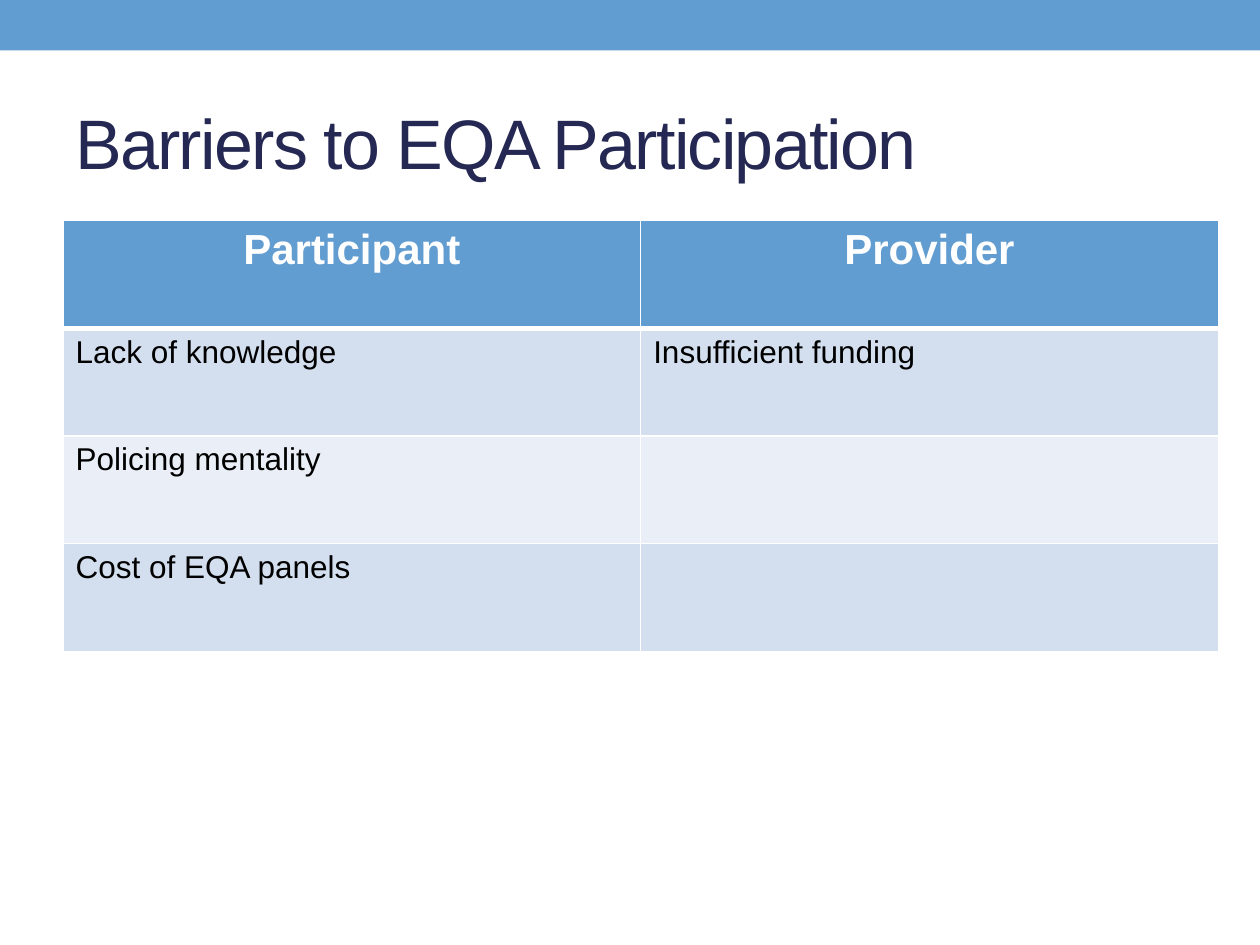
from lxml import etree
from pptx import Presentation
from pptx import util as u
from pptx.dml.color import RGBColor
from pptx.enum import shapes, text
from pptx.oxml.ns import qn

BLUE, NAVY, WHITE, BLACK = "629DD1", "242852", "FFFFFF", "000000"
BANDS = ["D3DFEE", "EAEFF7"]
ROWS = [
    ("Participant", "Provider"),
    ("Lack of knowledge", "Insufficient funding"),
    ("Policing mentality", ""),
    ("Cost of EQA panels", ""),
]


def paint(color_format, color):
    color_format.rgb = RGBColor.from_string(color)


def fill_solid(fill, color):
    fill.solid()
    paint(fill.fore_color, color)


def format_runs(paragraph, size, color, bold=False):
    for run in paragraph.runs:
        run.font.name = "Arial"
        run.font.size = u.Pt(size)
        run.font.bold = bold
        paint(run.font.color, color)


def set_borders(cell, color, top, bottom):
    """Draw all four cell borders; top and bottom are widths in points."""
    properties = cell._tc.get_or_add_tcPr()
    for side, width in (("L", 1), ("R", 1), ("T", top), ("B", bottom)):
        line = etree.SubElement(properties, qn(f"a:ln{side}"), w=str(u.Pt(width)))
        solid = etree.SubElement(line, qn("a:solidFill"))
        etree.SubElement(solid, qn("a:srgbClr"), val=color)


def add_top_band(slide, left, top, width, height):
    band = slide.shapes.add_shape(
        shapes.MSO_SHAPE.RECTANGLE, left, top, width, height)
    band.shadow.inherit = False
    fill_solid(band.fill, BLUE)
    band.line.fill.background()


def add_title(slide, left, top, width, height):
    title = slide.shapes.add_textbox(left, top, width, height)
    frame = title.text_frame
    frame.word_wrap = True
    frame.vertical_anchor = text.MSO_ANCHOR.MIDDLE
    frame.text = "Barriers to EQA Participation"
    paragraph = frame.paragraphs[0]
    format_runs(paragraph, 40, NAVY)
    paragraph.runs[0].font._element.set("spc", "-100")


def add_barrier_table(slide, left, top, width, height):
    table = slide.shapes.add_table(
        len(ROWS), len(ROWS[0]), left, top, width, height).table
    for row_index, row in enumerate(ROWS):
        is_header = row_index == 0
        for column_index, wording in enumerate(row):
            cell = table.cell(row_index, column_index)
            set_borders(cell, WHITE, top=3 if row_index == 1 else 1,
                        bottom=3 if is_header else 1)
            fill_solid(cell.fill, BLUE if is_header else BANDS[(row_index - 1) % 2])
            cell.text_frame.text = wording
            paragraph = cell.text_frame.paragraphs[0]
            if is_header:
                paragraph.alignment = text.PP_ALIGN.CENTER
                format_runs(paragraph, 24, WHITE, bold=True)
            else:
                format_runs(paragraph, 18, BLACK)


def main():
    presentation = Presentation()
    presentation.slide_width = u.Inches(10)
    presentation.slide_height = u.Inches(7.5)
    slide = presentation.slides.add_slide(presentation.slide_layouts[6])
    add_top_band(slide, 0, 0, presentation.slide_width, u.Inches(0.4))
    add_title(slide, u.Inches(0.5), u.Inches(0.58), u.Inches(9), u.Inches(1.08))
    add_barrier_table(
        slide, u.Inches(0.5), u.Inches(1.75), u.Inches(9.17), u.Inches(3.42))
    presentation.save("out.pptx")


if __name__ == "__main__":
    main()
